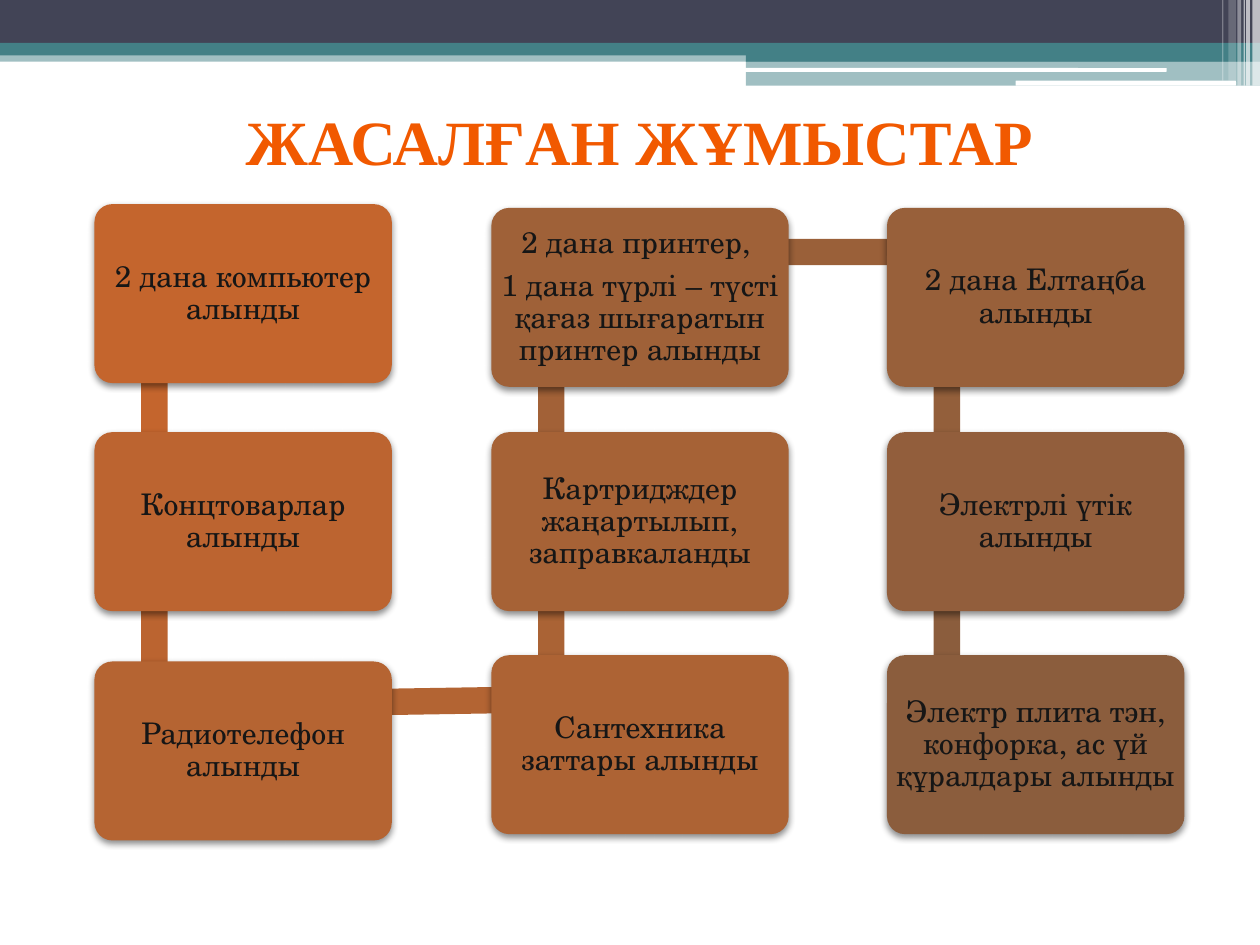
import math

import lxml.etree
import pptx
import pptx.dml.color
import pptx.enum.shapes
import pptx.enum.text
import pptx.oxml.ns
import pptx.util

Inches = pptx.util.Inches
Pt = pptx.util.Pt
SHAPES = pptx.enum.shapes.MSO_SHAPE
ALIGN = pptx.enum.text.PP_ALIGN
ANCHOR = pptx.enum.text.MSO_ANCHOR
qn = pptx.oxml.ns.qn


def color(value):
    return pptx.dml.color.RGBColor.from_string(value)


def set_format(target, values):
    for name, value in values.items():
        setattr(target, name, value)


class SlideBuilder:
    title_font = {"name": "Times New Roman", "size": Pt(36), "bold": True}
    step_font = {"name": "TeX Gyre Schola", "size": Pt(17), "bold": False}
    step_paragraph = {"alignment": ALIGN.CENTER, "line_spacing": 0.9,
                      "space_after": Pt(6)}
    step_frame = {"word_wrap": True, "vertical_anchor": ANCHOR.MIDDLE,
                  "margin_left": Inches(0.03), "margin_right": Inches(0.03),
                  "margin_top": Inches(0.03), "margin_bottom": Inches(0.03)}

    def __init__(self, page):
        self.page = page

    def title(self, text, left, top, width, height):
        box = self.page.shapes.title
        set_format(box, {"left": Inches(left), "top": Inches(top),
                         "width": Inches(width), "height": Inches(height)})
        frame = box.text_frame
        set_format(frame, {"word_wrap": False, "vertical_anchor": ANCHOR.MIDDLE,
                           "auto_size": pptx.enum.text.MSO_AUTO_SIZE.NONE})
        para = frame.paragraphs[0]
        para.alignment = ALIGN.LEFT
        span = para.add_run()
        span.text = text
        set_format(span.font, self.title_font)
        span.font.color.rgb = color("F15900")

    def block(self, left, top, width, height, fill, opacity=100,
              kind=SHAPES.RECTANGLE, corner=None):
        shape = self.page.shapes.add_shape(
            kind, Inches(left), Inches(top), Inches(width), Inches(height))
        shape.shadow.inherit = False
        shape.fill.solid()
        shape.fill.fore_color.rgb = color(fill)
        shape.line.fill.background()
        if corner is not None:
            shape.adjustments[0] = corner
        if opacity < 100:
            tint = next(shape._element.spPr.iter(qn("a:srgbClr")))
            lxml.etree.SubElement(tint, qn("a:alpha"), val=str(opacity * 1000))
        return shape

    def bar(self, start, end, fill, thickness=0.21):
        """Draw a thick link centred between two points."""
        across, down = end[0] - start[0], end[1] - start[1]
        length = math.hypot(across, down) - 0.02
        shape = self.block((start[0] + end[0] - length) / 2,
                           (start[1] + end[1] - thickness) / 2,
                           length, thickness, fill)
        shape.rotation = math.degrees(math.atan2(down, across)) % 360

    def step(self, lines, left, top, width, height, fill):
        box = self.block(left, top, width, height, fill,
                         kind=SHAPES.ROUNDED_RECTANGLE, corner=0.1)
        self.soft_shadow(box)
        frame = box.text_frame
        set_format(frame, self.step_frame)
        for index, line in enumerate(lines):
            para = frame.add_paragraph() if index else frame.paragraphs[0]
            set_format(para, self.step_paragraph)
            span = para.add_run()
            span.text = line
            set_format(span.font, self.step_font)
            span.font.color.rgb = color("161616")
        # No gap below the last line, so the text stays centred
        para.space_after = Pt(0)

    def soft_shadow(self, shape):
        effects = shape._element.spPr.find(qn("a:effectLst"))
        shadow = lxml.etree.SubElement(
            effects, qn("a:outerShdw"), blurRad=str(Pt(4)), dist=str(Pt(2)),
            dir="5400000", rotWithShape="0")
        tint = lxml.etree.SubElement(shadow, qn("a:srgbClr"), val="000000")
        lxml.etree.SubElement(tint, qn("a:alpha"), val="45000")


# Header bands: left, top, width, height, fill, opacity
BANDS = [
    (0, 0.4, 10, 0.09, "438086", 50),
    (0, 0, 10, 0.34, "424456", 100),
    (0, 0.34, 10, 0.1, "438086", 100),
    (5.92, 0.39, 4.08, 0.1, "438086", 100),
    (5.92, 0.48, 4.08, 0.2, "438086", 50),
]
# White rounded strips: left, top, width, height
STRIPS = [(5.91, 0.54, 3.35, 0.03), (8.06, 0.64, 1.75, 0.04)]
# White stripes at the right edge: left, width, height, opacity
STRIPES = [
    (9.94, 0.06, 0.68, 65), (9.89, 0.03, 0.68, 65), (9.87, 0.01, 0.68, 60),
    (9.82, 0.03, 0.68, 40), (9.75, 0.06, 0.64, 20), (9.7, 0.01, 0.64, 30),
]

COLUMNS = [0.75, 3.9, 7.04]
STEP_WIDTH, STEP_HEIGHT = 2.36, 1.42
# Steps in reading order: column, top, fill, fill of the link onward, lines
STEPS = [
    (0, 1.62, "C4652D", "C4652D", ["2 дана компьютер алынды"]),
    (0, 3.43, "BC6430", "BB6430", ["Концтоварлар алынды"]),
    (0, 5.25, "B56432", "B36433", ["Радиотелефон алынды"]),
    (1, 5.2, "AD6334", "AA6335", ["Сантехника заттары алынды"]),
    (1, 3.43, "A66236", "A26137", ["Картридждер жаңартылып, заправкаланды"]),
    (1, 1.65, "9F6138", "9A6039",
     ["2 дана принтер, ", "1 дана түрлі – түсті қағаз шығаратын принтер алынды"]),
    (2, 1.65, "98603A", "935F3B", ["2 дана Елтаңба алынды"]),
    (2, 3.43, "925E3C", "8B5D3D", ["Электрлі үтік алынды"]),
    (2, 5.2, "8B5D3D", None,
     ["Электр плита тэн, конфорка, ас үй құралдары алынды"]),
]


def main():
    deck = pptx.Presentation()
    deck.slide_width, deck.slide_height = Inches(10), Inches(7.5)
    builder = SlideBuilder(deck.slides.add_slide(deck.slide_layouts[5]))

    # Header decoration
    for band in BANDS:
        builder.block(*band)
    for strip in STRIPS:
        builder.block(*strip, "FFFFFF", kind=SHAPES.ROUNDED_RECTANGLE,
                      corner=0.167)
    for left, width, height, opacity in STRIPES:
        builder.block(left, 0, width, height, "FFFFFF", opacity)

    builder.title("ЖАСАЛҒАН ЖҰМЫСТАР", 1.85, 0.76, 6.51, 0.71)

    # Winding chain of steps, each link lying under the boxes it joins
    anchors = [(COLUMNS[column] + 0.475, top + 0.35)
               for column, top, *_ in STEPS]
    for index, (column, top, fill, link, lines) in enumerate(STEPS):
        if link:
            builder.bar(anchors[index], anchors[index + 1], link)
        builder.step(lines, COLUMNS[column], top, STEP_WIDTH, STEP_HEIGHT, fill)

    deck.save("out.pptx")


if __name__ == "__main__":
    main()
